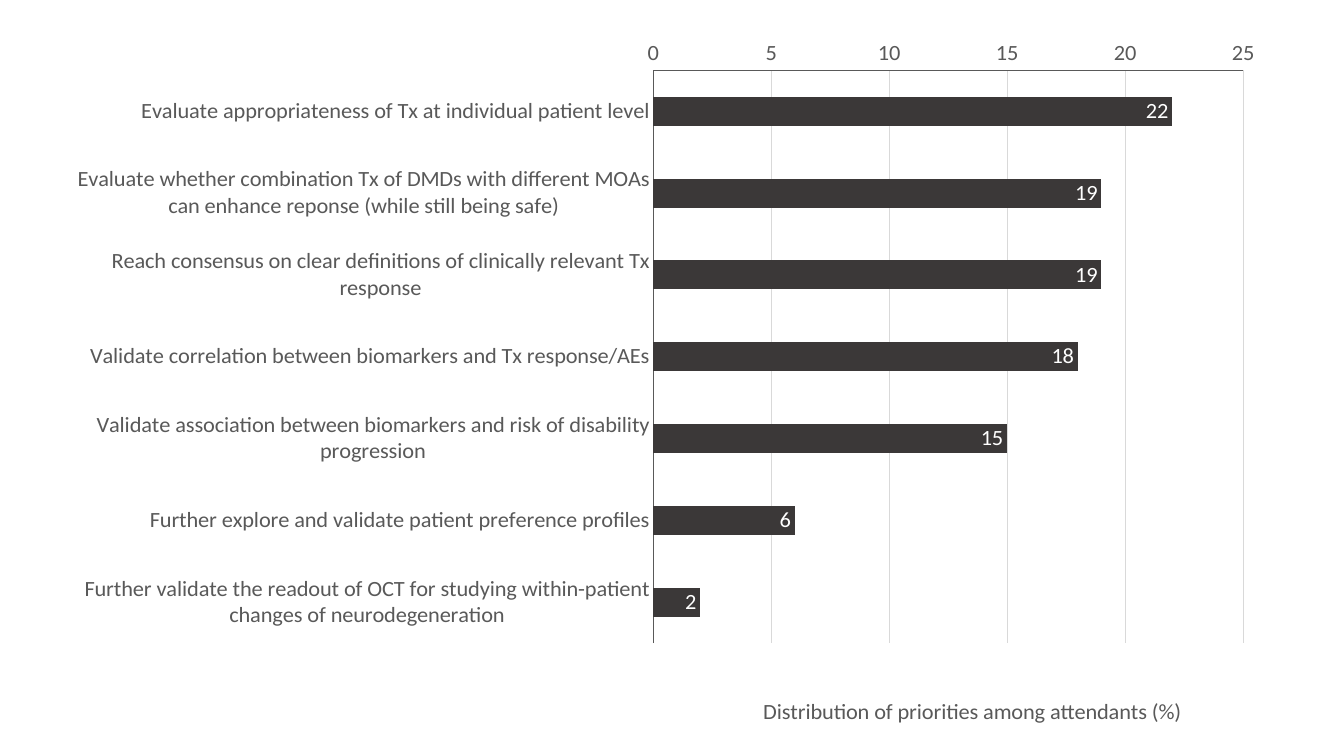
import pptx
import pptx.chart.data
import pptx.dml.color
import pptx.enum.chart
import pptx.oxml
import pptx.oxml.ns
import pptx.util

RGBColor = pptx.dml.color.RGBColor
BAR = RGBColor(0x3B, 0x38, 0x38)
TEXT = RGBColor(0x59, 0x59, 0x59)
AXIS = RGBColor(0x59, 0x59, 0x59)
GRID = RGBColor(0xD9, 0xD9, 0xD9)
WHITE = RGBColor(0xFF, 0xFF, 0xFF)

CHART_WIDTH, CHART_HEIGHT = 1157, 659

PRIORITIES = {
    "Evaluate appropriateness of Tx at individual patient level": 22,
    "Evaluate whether combination Tx of DMDs with different MOAs can enhance reponse (while still being safe)": 19,
    "Reach consensus on clear definitions of clinically relevant Tx response": 19,
    "Validate correlation between biomarkers and Tx response/AEs": 18,
    "Validate association between biomarkers and risk of disability progression": 15,
    "Further explore and validate patient preference profiles": 6,
    "Further validate the readout of OCT for studying within-patient changes of neurodegeneration": 2,
}


def px(n):
    """Turn px (96 to the inch) into EMU."""
    return pptx.util.Emu(n * 9525)


def manual_layout(x, y, w=None, h=None):
    """Make a chart layout from px inside the chart; a size means an inner plot area."""
    target = '<c:layoutTarget val="inner"/>' if w else ""
    sides = zip("xywh", (x, y, w, h), (CHART_WIDTH, CHART_HEIGHT) * 2)
    values = "".join(f'<c:{tag} val="{n / full:.4f}"/>' for tag, n, full in sides if n is not None)
    return pptx.oxml.parse_xml(
        f'<c:layout {pptx.oxml.ns.nsdecls("c")}><c:manualLayout>{target}'
        f'<c:xMode val="edge"/><c:yMode val="edge"/>{values}</c:manualLayout></c:layout>')


class SlideBuilder:
    font_name = "Calibri"
    font_size = pptx.util.Pt(16)
    line_width = pptx.util.Pt(0.75)

    def __init__(self, prs):
        self.s = prs.slides.add_slide(prs.slide_layouts[6])

    def style_font(self, font, color):
        font.name = self.font_name
        font.size = self.font_size
        font.bold = False
        font.color.rgb = color

    def style_line(self, line, color):
        line.color.rgb = color
        line.width = self.line_width

    def style_axis(self, axis):
        axis.major_tick_mark = axis.minor_tick_mark = pptx.enum.chart.XL_TICK_MARK.NONE
        self.style_font(axis.tick_labels.font, TEXT)
        self.style_line(axis.format.line, AXIS)

    def place(self, chart, query, index, layout):
        """Put the layout at the given child position of the chart part."""
        part = chart.element.xpath(query)[0]
        for old in part.xpath("c:layout"):
            part.remove(old)
        part.insert(index, layout)

    def bar_chart(self, x, y, w, h, values, axis_title):
        data = pptx.chart.data.CategoryChartData()
        data.categories = list(values)
        data.add_series("Series 1", list(values.values()))
        chart = self.s.shapes.add_chart(
            pptx.enum.chart.XL_CHART_TYPE.BAR_CLUSTERED, px(x), px(y), px(w), px(h), data).chart
        chart.has_legend = chart.has_title = False
        chart.font.name = self.font_name
        chart.font.size = pptx.util.Pt(10)

        cat_axis, val_axis = chart.category_axis, chart.value_axis
        for axis in (cat_axis, val_axis):
            self.style_axis(axis)
        cat_axis.reverse_order = True
        cat_axis.crosses = pptx.enum.chart.XL_AXIS_CROSSES.MINIMUM
        val_axis.minimum_scale, val_axis.maximum_scale, val_axis.major_unit = 0, 25, 5
        self.style_line(val_axis.major_gridlines.format.line, GRID)
        tf = val_axis.axis_title.text_frame
        tf.text = axis_title
        self.style_font(tf.paragraphs[0].font, TEXT)

        plot = chart.plots[0]
        plot.gap_width = 182
        plot.vary_by_categories = False
        fill = plot.series[0].format.fill
        fill.solid()
        fill.fore_color.rgb = BAR
        labels = plot.series[0].data_labels
        labels.show_value = True
        labels.position = pptx.enum.chart.XL_LABEL_POSITION.INSIDE_END
        self.style_font(labels.font, WHITE)
        return chart


def main():
    prs = pptx.Presentation()
    prs.slide_width, prs.slide_height = px(1280), px(720)
    builder = SlideBuilder(prs)
    chart = builder.bar_chart(47, 38, CHART_WIDTH, CHART_HEIGHT, PRIORITIES,
                              "Distribution of priorities among attendants (%)")
    builder.place(chart, "c:chart/c:plotArea", 0, manual_layout(575, 18, 562, 561))
    builder.place(chart, "c:chart/c:plotArea/c:valAx/c:title", 1, manual_layout(676, 627))
    prs.save("out.pptx")


if __name__ == "__main__":
    main()
